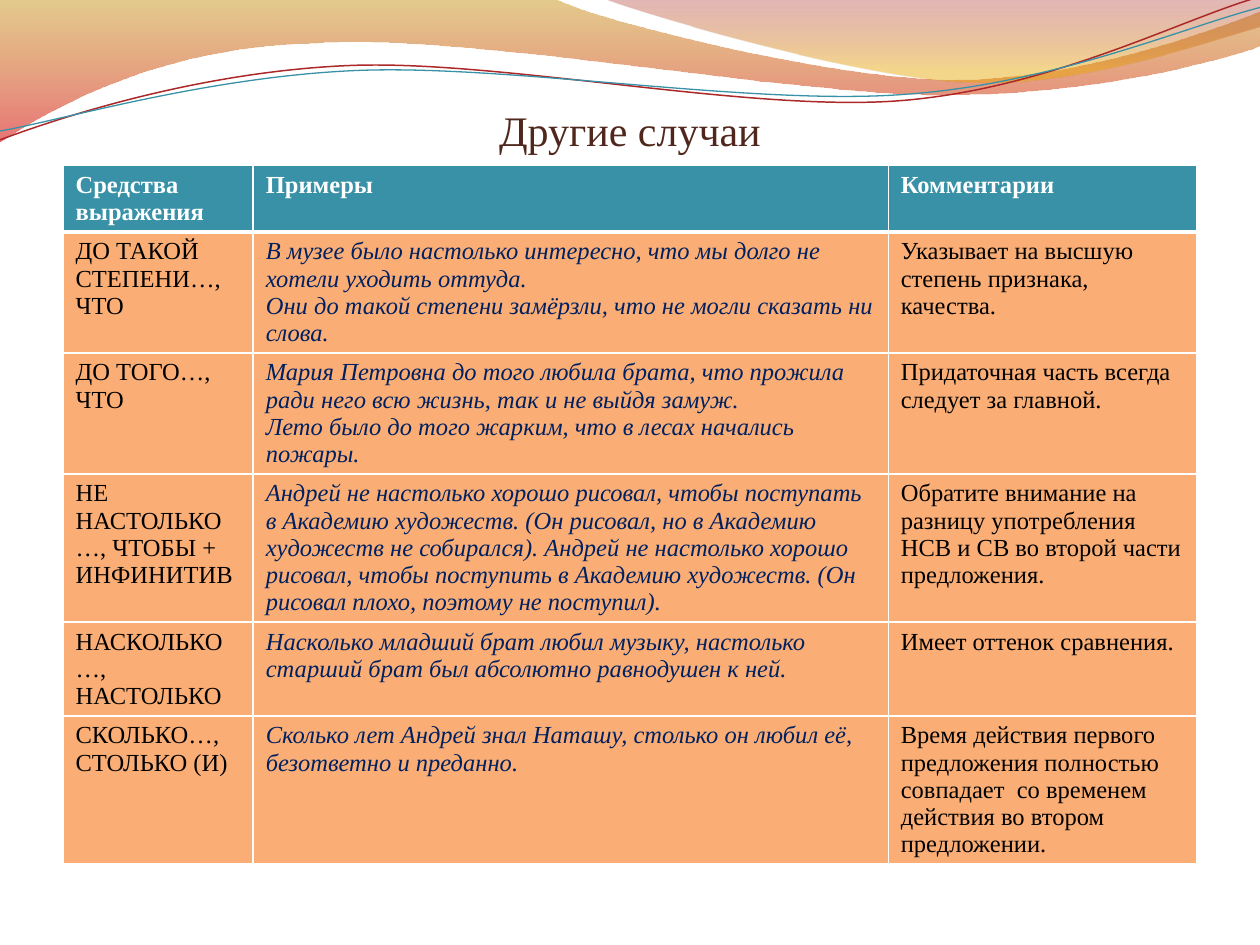
"""Builds a grammar table slide under a banner of waves."""
from math import cos, radians, sin
from pptx import Presentation
from pptx.dml.color import RGBColor as Rgb
from pptx.enum.text import MSO_ANCHOR as Anchor, PP_ALIGN as Align
from pptx.oxml.ns import qn
from pptx.util import Inches, Pt
from lxml.etree import SubElement as Sub

HUES = {
    "title": "4F271C", "head": "3891A7", "body": "FAAE76", "white": "FFFFFF",
    "black": "000000", "navy": "002060", "gold": "C38B00", "red": "D60305",
    "wine": "A11112", "amber": "E9A600", "brick": "AC2829", "teal": "3891A7",
}
FACE = "Times New Roman"
TILT = 2.7

BANDS = [
    ([(0, 0), (4.4, -0.01),
      (4.76, 0.17, 6.64, 0.63, 7.58, 0.63), (8.53, 0.63, 9.58, 0.26, 10, 0.09),
      (10.01, 0.36),
      (9.83, 0.44, 8.7, 0.76, 7.46, 0.75), (6.22, 0.75, 3.82, 0.28, 2.57, 0.34),
      (1.29, 0.36, 0.46, 0.83, -0.01, 1.13)],
     [(0, "gold", 45), (1, "red", 55)]),
    ([(4.79, -0.01),
      (5.09, 0.11, 6.82, 0.62, 7.69, 0.65), (8.56, 0.69, 9.61, 0.32, 10, 0.21),
      (10, 0)],
     [(0, "wine", 30), (0.8, "amber", 45)]),
]
LINES = [
    ([(0, 1.11), (0.48, 0.93, 1.58, 0.57, 2.77, 0.52),
      (3.95, 0.47, 5.93, 0.89, 7.13, 0.8), (8.33, 0.71, 9.38, 0.15, 9.98, -0.02)],
     "brick", 0.85, (4.99, 0.58)),
    ([(0, 1.04), (0.47, 0.96, 1.64, 0.61, 2.83, 0.56),
      (4.03, 0.51, 5.97, 0.84, 7.17, 0.75), (8.36, 0.67, 9.41, 0.21, 10, 0.06)],
     "teal", 0.75, (5, 0.59)),
]
WIDTHS = [1.51, 5.04, 2.45]
ROWS = [
    ("Средства выражения", "Примеры", "Комментарии"),
    ("ДО ТАКОЙ СТЕПЕНИ…, ЧТО",
     "В музее было настолько интересно, что мы долго не хотели уходить оттуда.\n"
     "Они до такой степени замёрзли, что не могли сказать ни слова.",
     "Указывает на высшую степень признака, качества."),
    ("ДО ТОГО…, ЧТО",
     "Мария Петровна до того любила брата, что прожила ради него всю жизнь, "
     "так и не выйдя замуж.\n"
     "Лето было до того жарким, что в лесах начались пожары.",
     "Придаточная часть всегда следует за главной."),
    ("НЕ НАСТОЛЬКО…, ЧТОБЫ + ИНФИНИТИВ",
     "Андрей не настолько хорошо рисовал, чтобы поступать в Академию художеств. "
     "(Он рисовал, но в Академию художеств не собирался). "
     "Андрей не настолько хорошо рисовал, чтобы поступить в Академию художеств. "
     "(Он рисовал плохо, поэтому не поступил).",
     "Обратите внимание на разницу употребления НСВ и СВ во второй части предложения."),
    ("НАСКОЛЬКО…, НАСТОЛЬКО",
     "Насколько младший брат любил музыку, настолько старший брат был "
     "абсолютно равнодушен к ней.",
     "Имеет оттенок сравнения."),
    ("СКОЛЬКО…, СТОЛЬКО (И)",
     "Сколько лет Андрей знал Наташу, столько он любил её, безответно и преданно.",
     "Время действия первого предложения полностью совпадает  со временем "
     "действия во втором предложении."),
]


def pairs(part):
    """Split a flat run of numbers into points."""
    return list(zip(part[::2], part[1::2]))


def turn(path, hub):
    """Return the path turned by the tilt about a hub."""
    c, s = cos(radians(TILT)), sin(radians(TILT))
    out = []
    for part in path:
        flat = []
        for x, y in pairs(part):
            dx, dy = x - hub[0], y - hub[1]
            flat += [hub[0] + c * dx - s * dy, hub[1] + s * dx + c * dy]
        out.append(flat)
    return out


class Deck:
    """Holds the style and the current slide."""

    def __init__(self):
        self.file = Presentation()
        self.file.slide_width, self.file.slide_height = Inches(10), Inches(7.5)
        self.slide = self.file.slides.add_slide(self.file.slide_layouts[5])
        self.shapes = self.slide.shapes

    def hue(self, name):
        return Rgb.from_string(HUES[name])

    def font(self, para, size, hue, bold=False, italic=False):
        font = para.font
        font.name, font.size = FACE, Pt(size)
        font.bold, font.italic = bold, italic
        font.color.rgb = self.hue(hue)

    def curve(self, path, close):
        dots = [(Inches(x), Inches(y)) for part in path for x, y in pairs(part)]
        pen = self.shapes.build_freeform(*dots[0])
        pen.add_line_segments(dots[1:], close=close)
        shape = pen.convert_to_shape()
        shape.shadow.inherit = False
        legs = iter(list(shape._element.iter(qn("a:lnTo"))))
        for part in path[1:]:
            leg = next(legs)
            if len(part) == 6:
                leg.tag = qn("a:cubicBezTo")
                for _ in range(2):
                    extra = next(legs)
                    leg.append(extra[0])
                    extra.getparent().remove(extra)
        return shape

    def band(self, path, stops):
        shape = self.curve(path, True)
        shape.line.fill.background()
        shape.fill.gradient()
        shape.fill.gradient_angle = 270
        for stop, (place, hue, alpha) in zip(shape.fill.gradient_stops, stops):
            stop.position = place
            stop.color.rgb = self.hue(hue)
        tints = shape._element.spPr.iter(qn("a:srgbClr"))
        for tint, (place, hue, alpha) in zip(tints, stops):
            Sub(tint, qn("a:alpha"), val=str(alpha * 1000))

    def line(self, path, hue, width, hub):
        shape = self.curve(turn(path, hub), False)
        shape.rotation = 360 - TILT
        shape.fill.background()
        shape.line.color.rgb = self.hue(hue)
        shape.line.width = Pt(width)

    def title(self, text, *box):
        shape = self.shapes.title
        shape.left, shape.top, shape.width, shape.height = map(Inches, box)
        frame = shape.text_frame
        frame.text = text
        frame.vertical_anchor = Anchor.BOTTOM
        frame.margin_left = frame.margin_right = frame.margin_bottom = 0
        frame.margin_top = Inches(0.05)
        para = frame.paragraphs[0]
        para.alignment = Align.CENTER
        self.font(para, 24, "title")
        self.shapes._spTree.append(shape._element)

    def table(self, rows, widths, high, *box):
        grid = self.shapes.add_table(len(rows), len(widths), *map(Inches, box)).table
        grid.horz_banding = False
        for col, width in zip(grid.columns, widths):
            col.width = Inches(width)
        for r, texts in enumerate(rows):
            grid.rows[r].height = Inches(high)
            for c, text in enumerate(texts):
                self.cell(grid.cell(r, c), text, r == 0, c == 1)

    def cell(self, cell, text, head, sample):
        cell.text = text
        self.edges(cell, {"L": 1, "R": 1, "T": 1, "B": 3} if head
                   else {"L": 1, "R": 1, "B": 1})
        cell.fill.solid()
        cell.fill.fore_color.rgb = self.hue("head" if head else "body")
        hue = "white" if head else "navy" if sample else "black"
        for para in cell.text_frame.paragraphs:
            self.font(para, 14, hue, head, sample and not head)

    def edges(self, cell, sides):
        props = cell._tc.get_or_add_tcPr()
        for side, width in sides.items():
            edge = Sub(props, qn("a:ln" + side), w=str(Pt(width)))
            Sub(Sub(edge, qn("a:solidFill")), qn("a:srgbClr"), val=HUES["white"])


def main():
    deck = Deck()
    for band in BANDS:
        deck.band(*band)
    for line in LINES:
        deck.line(*line)
    deck.title("Другие случаи", 0.5, 0.77, 9, 0.46)
    deck.table(ROWS, WIDTHS, 0.41, 0.5, 1.31, 9, 5.97)
    deck.file.save("out.pptx")


if __name__ == "__main__":
    main()
